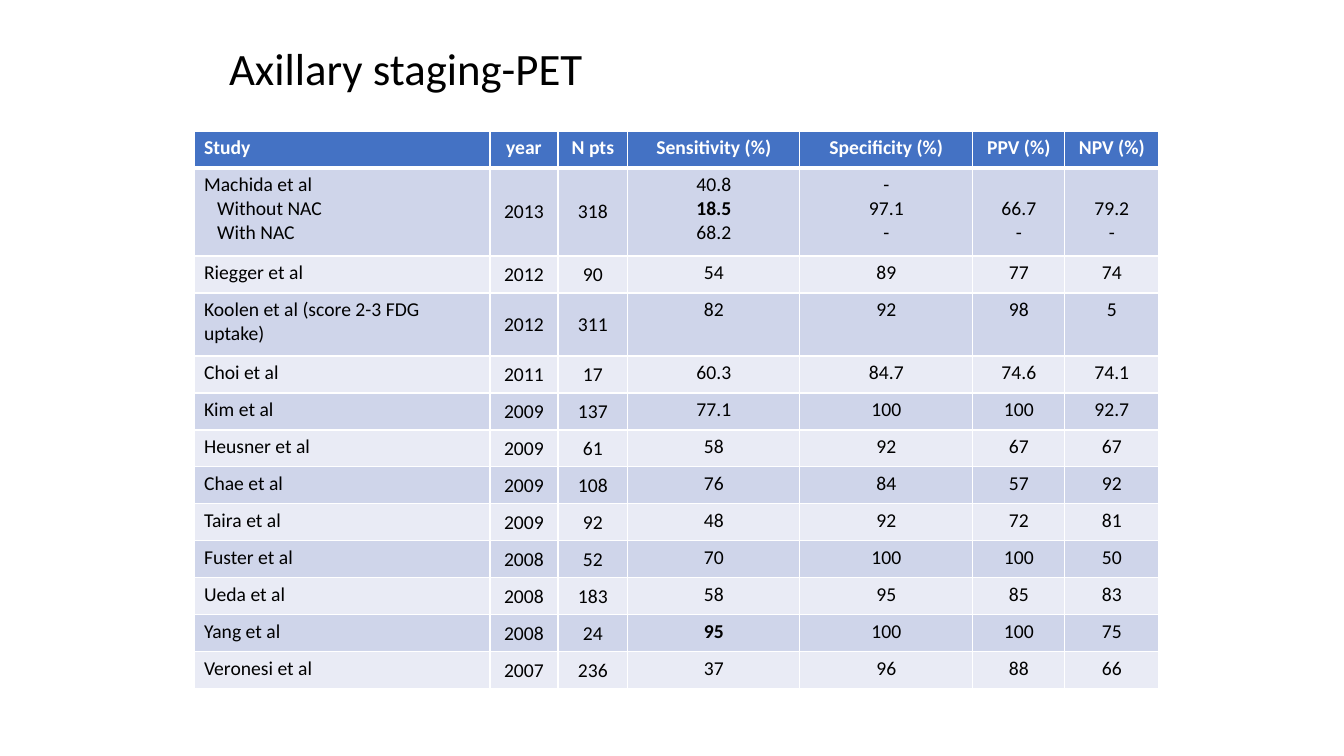
from dataclasses import dataclass

from lxml import etree
from pptx import Presentation
from pptx.dml.color import RGBColor
from pptx.enum.text import MSO_ANCHOR, PP_ALIGN
from pptx.oxml.ns import qn
from pptx.util import Pt

LEFT, CENTER = PP_ALIGN.LEFT, PP_ALIGN.CENTER
TOP, MIDDLE = MSO_ANCHOR.TOP, MSO_ANCHOR.MIDDLE
EMU_PER_PX = 12192000 / 1344
TITLE_ONLY = 5


@dataclass(frozen=True)
class Theme:
    font: str = "Calibri"
    title_size: int = 32
    cell_size: int = 14
    text: str = "000000"
    header_text: str = "FFFFFF"
    header_fill: str = "4472C4"
    bands: tuple = ("CFD5EA", "E9EBF5")
    border: str = "FFFFFF"
    thin: int = 1
    thick: int = 3
    cell_margin: int = 5
    line_height: int = 24
    indent: int = 13


# Table content: a line break starts a paragraph, * marks bold,
# and a leading line break lowers the text by one line
HEADER = ("Study", "year", "N pts", "Sensitivity (%)", "Specificity (%)", "PPV (%)", "NPV (%)")
STUDIES = (
    ("Machida et al\nWithout NAC\nWith NAC", "2013", "318",
     "40.8\n*18.5\n68.2", "-\n97.1\n-", "\n66.7\n-", "\n79.2\n-"),
    ("Riegger et al", "2012", "90", "54", "89", "77", "74"),
    ("Koolen et al (score 2-3 FDG uptake)", "2012", "311", "82", "92", "98", "5"),
    ("Choi et al", "2011", "17", "60.3", "84.7", "74.6", "74.1"),
    ("Kim et al", "2009", "137", "77.1", "100", "100", "92.7"),
    ("Heusner et al", "2009", "61", "58", "92", "67", "67"),
    ("Chae et al", "2009", "108", "76", "84", "57", "92"),
    ("Taira et al", "2009", "92", "48", "92", "72", "81"),
    ("Fuster et al", "2008", "52", "70", "100", "100", "50"),
    ("Ueda et al", "2008", "183", "58", "95", "85", "83"),
    ("Yang et al", "2008", "24", "*95", "100", "100", "75"),
    ("Veronesi et al", "2007", "236", "37", "96", "88", "66"),
)
COLUMN_WIDTHS = (296, 68, 70, 172, 173, 92, 94)
ROW_HEIGHT = 37
TALL_ROWS = {1: 88, 3: 63}
MIDDLE_COLUMNS = (1, 2)


def px(length):
    return round(length * EMU_PER_PX)


class SlideBuilder:
    def __init__(self, slide, theme):
        self.slide = slide
        self.theme = theme

    def add_run(self, paragraph, text, size, color, bold=False):
        run = paragraph.add_run()
        run.text = text
        run.font.name = self.theme.font
        run.font.size = Pt(size)
        run.font.bold = bold
        run.font.color.rgb = RGBColor.from_string(color)

    def add_title(self, text, left, top, width, height):
        title = self.slide.shapes.title
        title.left, title.top, title.width, title.height = map(px, (left, top, width, height))
        title.text_frame.vertical_anchor = MIDDLE
        title.text_frame.word_wrap = True
        paragraph = title.text_frame.paragraphs[0]
        paragraph.alignment = LEFT
        paragraph.line_spacing = 0.9
        self.add_run(paragraph, text, self.theme.title_size, self.theme.text)

    def add_table(self, rows, left, top, widths, heights):
        frame = self.slide.shapes.add_table(
            len(rows), len(widths), px(left), px(top), px(sum(widths)), px(sum(heights)))
        table = frame.table
        table.horz_banding = False
        for column, width in zip(table.columns, widths):
            column.width = px(width)
        for row, height in zip(table.rows, heights):
            row.height = px(height)
        for row_index, row in enumerate(rows):
            for column_index, text in enumerate(row):
                cell = table.cell(row_index, column_index)
                self.fill_cell(cell, text, row_index, column_index)
                self.set_borders(cell, row_index)

    def fill_cell(self, cell, text, row_index, column_index):
        theme = self.theme
        is_header = row_index == 0
        fill = theme.header_fill if is_header else theme.bands[(row_index - 1) % 2]
        color = theme.header_text if is_header else theme.text
        cell.fill.solid()
        cell.fill.fore_color.rgb = RGBColor.from_string(fill)
        centered = not is_header and column_index in MIDDLE_COLUMNS
        cell.vertical_anchor = MIDDLE if centered else TOP

        lines = text.lstrip("\n")
        skipped = len(text) - len(lines)
        cell.margin_top = px(theme.cell_margin + skipped * theme.line_height)
        for line_index, line in enumerate(lines.split("\n")):
            frame = cell.text_frame
            paragraph = frame.add_paragraph() if line_index else frame.paragraphs[0]
            paragraph.alignment = CENTER if column_index else LEFT
            if line_index and column_index == 0:
                paragraph._p.get_or_add_pPr().set("marL", str(px(theme.indent)))
            bold = is_header or line.startswith("*")
            self.add_run(paragraph, line.lstrip("*"), theme.cell_size, color, bold)

    def set_borders(self, cell, row_index):
        theme = self.theme
        widths = {
            "lnL": theme.thin,
            "lnR": theme.thin,
            "lnT": theme.thick if row_index == 1 else theme.thin,
            "lnB": theme.thick if row_index == 0 else theme.thin,
        }
        properties = cell._tc.get_or_add_tcPr()
        for position, (side, width) in enumerate(widths.items()):
            line = etree.Element(qn(f"a:{side}"), w=str(Pt(width)))
            solid = etree.SubElement(line, qn("a:solidFill"))
            etree.SubElement(solid, qn("a:srgbClr"), val=theme.border)
            properties.insert(position, line)


def main():
    presentation = Presentation()
    presentation.slide_width, presentation.slide_height = px(1344), px(756)
    slide = presentation.slides.add_slide(presentation.slide_layouts[TITLE_ONLY])
    builder = SlideBuilder(slide, Theme())

    # Results table
    rows = (HEADER, *STUDIES)
    heights = [TALL_ROWS.get(index, ROW_HEIGHT) for index in range(len(rows))]
    builder.add_table(rows, 194, 131, COLUMN_WIDTHS, heights)

    # Title
    builder.add_title("Axillary staging-PET", 219, 33, 907, 76)

    presentation.save("out.pptx")


if __name__ == "__main__":
    main()
